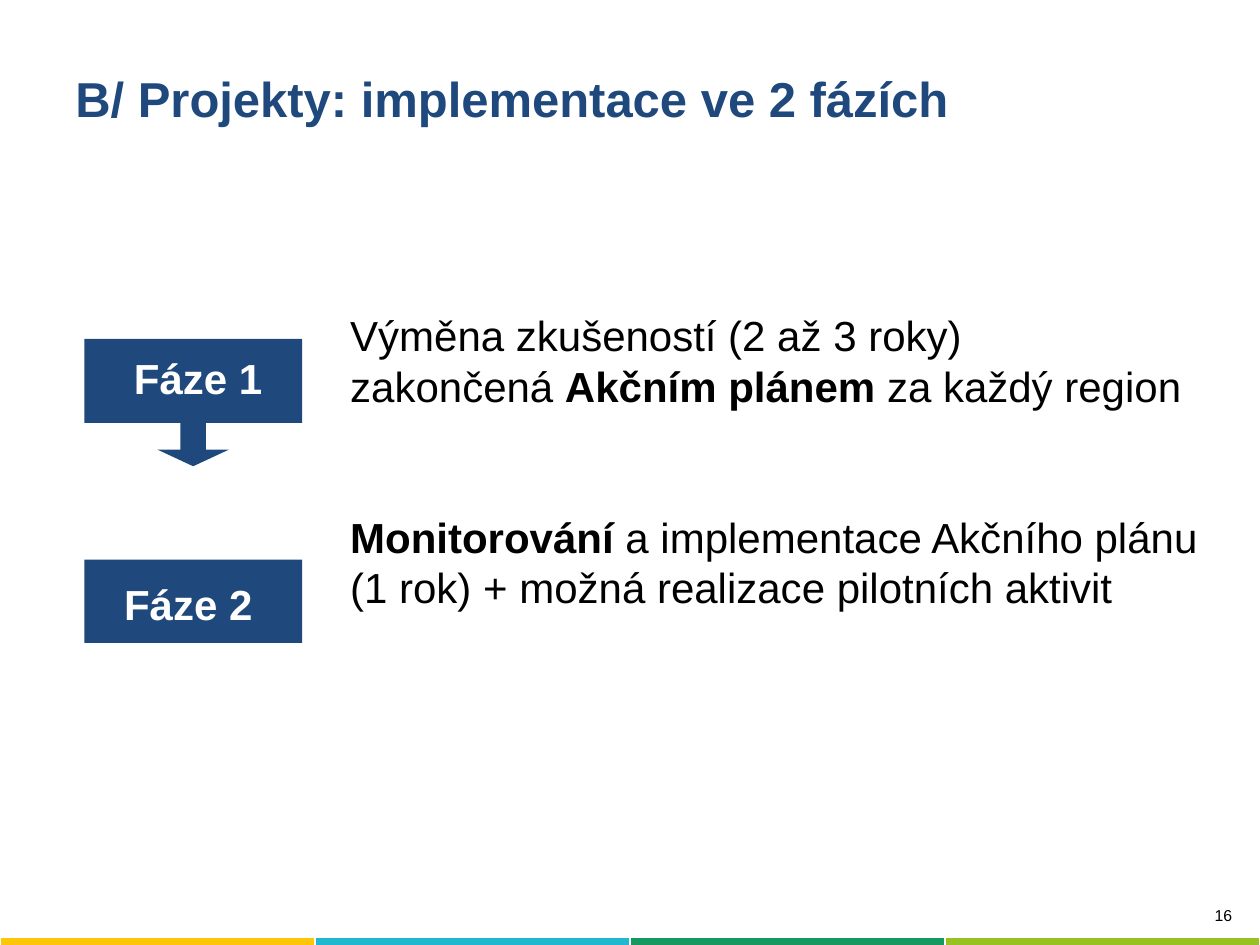
"""Build the slide on the two project phases."""
import pptx
import pptx.util
import pptx.dml.color
import pptx.enum.shapes
import pptx.enum.text

Cm, Pt = pptx.util.Cm, pptx.util.Pt
Align = pptx.enum.text.PP_ALIGN
Anchor = pptx.enum.text.MSO_ANCHOR
Shape = pptx.enum.shapes.MSO_SHAPE
NAVY = "1F497D"


def color(value):
    return pptx.dml.color.RGBColor.from_string(value)


def add_text(place, paragraphs, size, ink, paragraph_format, anchor=Anchor.TOP):
    frame = slide.shapes.add_textbox(*map(Cm, place)).text_frame
    frame.word_wrap = True
    frame.vertical_anchor = anchor
    for index, runs in enumerate(paragraphs):
        paragraph = frame.add_paragraph() if index else frame.paragraphs[0]
        for name, value in paragraph_format.items():
            setattr(paragraph, name, value)
        for text, bold in runs:
            run = paragraph.add_run()
            run.text = text
            font_format = {"name": "Arial", "size": Pt(size), "bold": bold}
            for name, value in font_format.items():
                setattr(run.font, name, value)
            run.font.color.rgb = color(ink)
    return frame


presentation = pptx.Presentation()
presentation.slide_width, presentation.slide_height = Cm(25.4), Cm(19.05)
slide = presentation.slides.add_slide(presentation.slide_layouts[6])

stripe_colors = ["FDC609", "21B7CF", "159960", "98C222"]
stripe = slide.shapes.add_table(1, 4, Cm(0), Cm(18.9), Cm(25.4), Cm(0.15)).table
stripe.first_row = stripe.horz_banding = False
for cell, fill in zip(stripe.iter_cells(), stripe_colors):
    cell.margin_top = cell.margin_bottom = 0
    cell.fill.solid()
    cell.fill.fore_color.rgb = color(fill)

add_text((20.09, 18.14, 5, 0.79), [[("16", False)]], 9, "000000",
         {"alignment": Align.RIGHT})
add_text((1.27, 1.19, 22.86, 1.55),
         [[("B/ Projekty: implementace ve 2 fázích", True)]], 28, NAVY,
         {"alignment": Align.LEFT}, Anchor.MIDDLE)

descriptions = [
    [("Výměna zkušeností (2 až 3 roky)", False)],
    [("zakončená ", False), ("Akčním plánem", True), (" za každý region", False)],
    [("Monitorování", True), (" a implementace Akčního plánu", False)],
    [("(1 rok) + možná realizace pilotních aktivit", False)],
]
body = add_text((6.81, 6.12, 18.36, 6.4), descriptions, 24, "000000",
                {"alignment": Align.LEFT, "line_spacing": Pt(28.8)})
body.paragraphs[2].space_before = Pt(57.6)

phases = [
    ("Fáze 1", Shape.DOWN_ARROW_CALLOUT, (1.7, 6.83, 4.39, 2.57),
     [0.2, 0.28, 0.13, 0.66], (2.13, 6.98, 3.73, 1.27)),
    ("Fáze 2", Shape.RECTANGLE, (1.7, 11.28, 4.39, 1.68),
     [], (1.7, 11.53, 4.19, 1.27)),
]
for label, kind, place, adjustments, label_place in phases:
    shape = slide.shapes.add_shape(kind, *map(Cm, place))
    for index, value in enumerate(adjustments):
        shape.adjustments[index] = value
    shape.shadow.inherit = False
    shape.fill.solid()
    shape.fill.fore_color.rgb = color(NAVY)
    shape.line.fill.background()
    add_text(label_place, [[(label, True)]], 24, "FFFFFF",
             {"alignment": Align.CENTER})

presentation.save("out.pptx")
